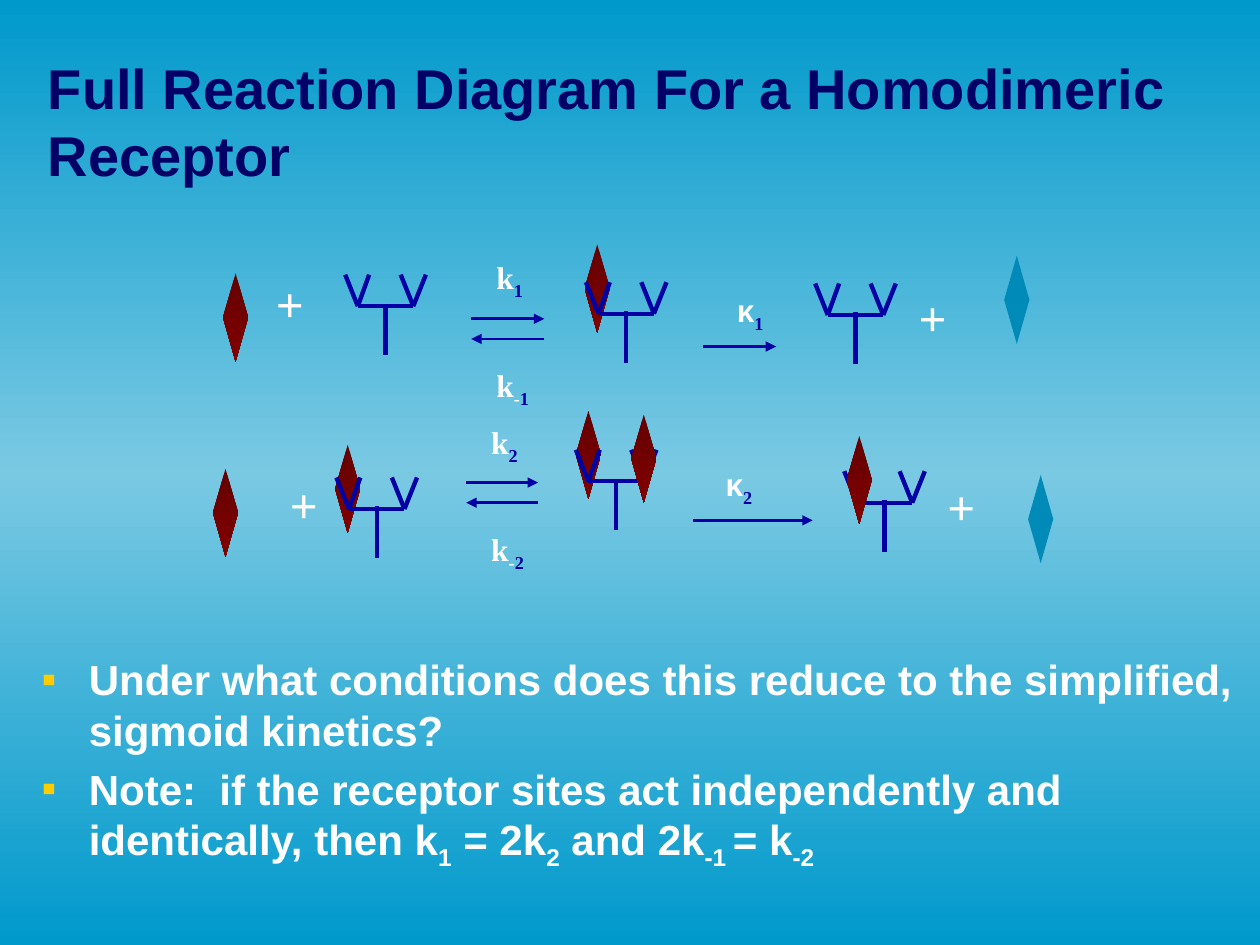
"""Build a slide showing the full reaction diagram for a homodimeric receptor."""
from copy import deepcopy

from lxml.etree import SubElement
from pptx import Presentation
from pptx.dml.color import RGBColor
from pptx.enum.shapes import MSO_CONNECTOR, MSO_SHAPE
from pptx.enum.text import MSO_ANCHOR, MSO_AUTO_SIZE, PP_ALIGN
from pptx.oxml.ns import qn
from pptx.util import Inches, Pt

COLUMNS, ROWS = 100, 75
THEME = {
    "edge": RGBColor.from_string("0099CC"),
    "middle": RGBColor.from_string("7AC9E3"),
    "navy": RGBColor.from_string("000066"),
    "white": RGBColor.from_string("FFFFFF"),
    "blue": RGBColor.from_string("0000A4"),
    "ligand": [RGBColor.from_string("650000"), RGBColor.from_string("800000")],
    "product": RGBColor.from_string("008AB8"),
    "bullet": "FFCC00",
    "title": {"name": "Arial", "size": Pt(32), "bold": True},
    "body": {"name": "Arial", "size": Pt(24), "bold": True},
    "plus": {"name": "Times New Roman", "size": Pt(28), "bold": True},
    "rate": {"name": "Times New Roman", "size": Pt(18), "bold": True},
    "kappa": {"name": "Arial", "size": Pt(18), "bold": True},
    "receptor_line": Pt(2.5),
    "arrow_line": Pt(1.5),
}

presentation = Presentation()
presentation.slide_width, presentation.slide_height = Inches(10), Inches(7.5)
column = presentation.slide_width / COLUMNS
row = presentation.slide_height / ROWS
slide = presentation.slides.add_slide(presentation.slide_layouts[1])
shapes = slide.shapes


def add_run(paragraph, text, style, color, subscript=False):
    """Append one formatted run to a paragraph."""
    run = paragraph.add_run()
    run.text = text
    for name, value in THEME[style].items():
        setattr(run.font, name, value)
    run.font.color.rgb = THEME[color]
    if subscript:
        run.font._element.set("baseline", "-25000")


def add_line(start, end, width, arrow=False):
    """Draw a straight line between two grid points."""
    (x1, y1), (x2, y2) = start, end
    line = shapes.add_connector(
        MSO_CONNECTOR.STRAIGHT,
        round(x1 * column), round(y1 * row), round(x2 * column), round(y2 * row))
    line.line.color.rgb = THEME["blue"]
    line.line.width = THEME[width]
    if arrow:
        SubElement(line.line._get_or_add_ln(), qn("a:tailEnd"), type="triangle")
    SubElement(line._element.spPr, qn("a:effectLst"))


background = slide.background.fill
background.gradient()
background.gradient_angle = 270
stop_list = slide.element.find(".//" + qn("a:gsLst"))
stop_list.insert(1, deepcopy(stop_list[0]))
for stop, position, color in zip(background.gradient_stops, (0, 0.5, 1), ("edge", "middle", "edge")):
    stop.position = position
    stop.color.rgb = THEME[color]

title, body = shapes.title, slide.placeholders[1]
for placeholder, (left, top, width, height), anchor in (
    (title, (2.8, 3.3, 91.2, 12.5), MSO_ANCHOR.MIDDLE),
    (body, (2.3, 51.4, 96.6, 17.6), MSO_ANCHOR.TOP),
):
    placeholder.left, placeholder.top = round(left * column), round(top * row)
    placeholder.width, placeholder.height = round(width * column), round(height * row)
    placeholder.text_frame.auto_size = MSO_AUTO_SIZE.NONE
    placeholder.text_frame.vertical_anchor = anchor

heading = title.text_frame.paragraphs[0]
heading.alignment = PP_ALIGN.LEFT
add_run(heading, "Full Reaction Diagram For a Homodimeric Receptor", "title", "navy")

bullets = [
    ["Under what conditions does this reduce to the simplified, sigmoid kinetics?"],
    ["Note:  if the receptor sites act independently and identically, then k",
     "1", " = 2k", "2", " and 2k", "-1 ", "= k", "-2"],
]
for index, parts in enumerate(bullets):
    frame = body.text_frame
    paragraph = frame.add_paragraph() if index else frame.paragraphs[0]
    properties = paragraph._p.get_or_add_pPr()
    indent = round(3.75 * column)
    properties.set("marL", str(indent))
    properties.set("indent", str(-indent))
    bullet_color = SubElement(properties, qn("a:buClr"))
    SubElement(bullet_color, qn("a:srgbClr"), val=THEME["bullet"])
    SubElement(properties, qn("a:buChar"), char="▪")
    for number, text in enumerate(parts):
        add_run(paragraph, text, "body", "white", subscript=number % 2 == 1)

labels = [(left, top, 5.2, 5.7, [("+", "plus", "white", False)])
          for left, top in ((20.4, 21.2), (71.4, 22.3), (21.5, 37.2), (73.7, 37.3))]
for digit, left, top, reverse_top, kappa_left, kappa_top in (
    ("1", 38.4, 20, 28.6, 57.5, 22.6),
    ("2", 38, 33.1, 41.6, 56.6, 36.4),
):
    rate = ("k", "rate", "white", False)
    minus = ("-", "rate", "white", True)
    kappa = ("κ", "kappa", "white", False)
    subscript = (digit, "rate", "blue", True)
    labels += [
        (left, top, 4.8, 4, [rate, subscript]),
        (left, reverse_top, 5.8, 4, [rate, minus, subscript]),
        (kappa_left, kappa_top, 7.2, 4, [kappa, subscript]),
    ]
for left, top, width, height, runs in labels:
    box = shapes.add_textbox(
        round(left * column), round(top * row), round(width * column), round(height * row))
    box.text_frame.word_wrap = True
    paragraph = box.text_frame.paragraphs[0]
    paragraph.alignment = PP_ALIGN.CENTER if runs[0][1] == "plus" else PP_ALIGN.LEFT
    for run in runs:
        add_run(paragraph, *run)

for start, end, height in (
    (37.4, 43.2, 25.3), (43.2, 37.4, 26.9), (55.8, 61.6, 27.5),
    (37, 42.7, 38.3), (42.7, 37, 39.9), (55, 64.5, 41.3),
):
    add_line((start, height), (end, height), "arrow_line", arrow=True)

receptor_strokes = [
    ((0, 0), (1, 2.5)), ((1, 2.5), (1.9, 0)), ((3.2, 2.3), (3.2, 6.4)),
    ((1, 2.5), (5.4, 2.5)), ((4.4, 0), (5.4, 2.5)), ((5.4, 2.5), (6.4, 0)),
]
ligands_behind = [(17.7, 21.7), (46.4, 19.4), (45.7, 32.6), (16.9, 37.2), (26.6, 35.3)]
receptors = [(27.4, 21.8), (46.5, 22.4), (64.7, 22.5), (26.7, 37.9), (45.7, 35.7), (67, 37.4)]
ligands_front = [(50.1, 32.9), (67.2, 34.6)]
products = [(79.7, 20.3), (81.6, 37.7)]
layers = (
    [("ligand", place) for place in ligands_behind]
    + [("receptor", place) for place in receptors]
    + [("ligand", place) for place in ligands_front]
    + [("product", place) for place in products]
)
for kind, (left, top) in layers:
    if kind == "receptor":
        for (x1, y1), (x2, y2) in receptor_strokes:
            add_line((left + x1, top + y1), (left + x2, top + y2), "receptor_line")
        continue
    diamond = shapes.add_shape(
        MSO_SHAPE.DIAMOND, round(left * column), round(top * row), round(2 * column), round(7 * row))
    diamond.shadow.inherit = False
    diamond.line.fill.background()
    if kind == "product":
        diamond.fill.solid()
        diamond.fill.fore_color.rgb = THEME["product"]
    else:
        diamond.fill.gradient()
        diamond.fill.gradient_angle = 270
        for stop, color in zip(diamond.fill.gradient_stops, THEME["ligand"]):
            stop.color.rgb = color

presentation.save("out.pptx")
